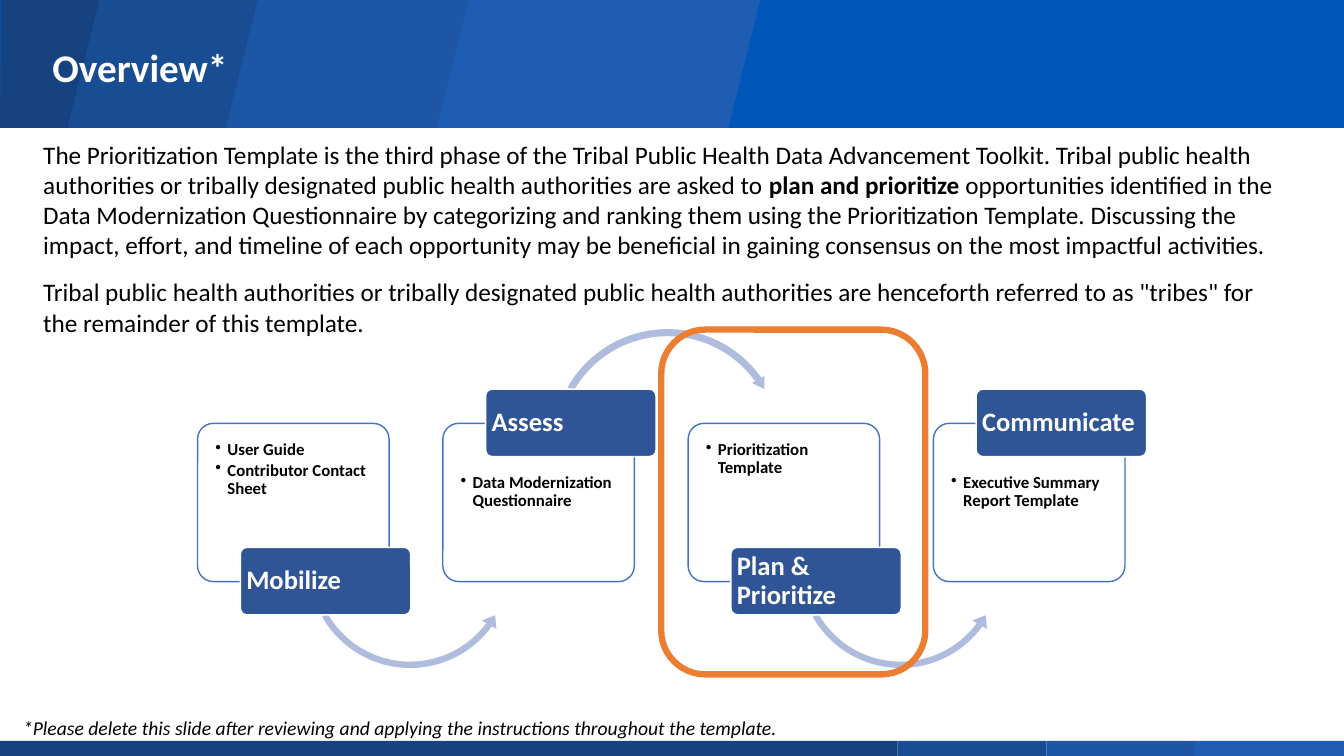
from dataclasses import dataclass

import pptx
import pptx.dml.color
import pptx.enum.shapes
import pptx.enum.text
import pptx.oxml
import pptx.oxml.ns
import pptx.util

Pt = pptx.util.Pt
Inches = pptx.util.Inches
SHAPE = pptx.enum.shapes.MSO_SHAPE
ANCHOR = pptx.enum.text.MSO_ANCHOR
ALIGN = pptx.enum.text.PP_ALIGN
WIDTH, HEIGHT = Inches(13.33), Inches(7.5)


@dataclass(frozen=True)
class Theme:
    font: str = "Calibri"
    header: str = "0057B7"
    blues: tuple = ("164380", "194D93", "1C56A4", "1E5DB2")
    tag: str = "2F5597"
    outline: str = "4472C4"
    arrow: str = "B0BCDE"
    highlight: str = "ED7D31"
    white: str = "FFFFFF"
    black: str = "000000"
    title_size: int = 28
    tag_size: int = 19
    body_size: int = 18
    note_size: int = 14
    bullet_size: int = 12


THEME = Theme()

BODY = [
    [("The Prioritization Template is the third phase of the Tribal Public Health Data "
      "Advancement Toolkit. Tribal public health authorities or tribally designated public "
      "health authorities are asked to ", False),
     ("plan and prioritize", True),
     (" opportunities identified in the Data Modernization Questionnaire by categorizing and "
      "ranking them using the Prioritization Template. Discussing the impact, effort, and "
      "timeline of each opportunity may be beneficial in gaining consensus on the most "
      "impactful activities.", False)],
    [("Tribal public health authorities or tribally designated public health authorities are "
      "henceforth referred to as \"tribes\" for the remainder of this template.", False)],
]
NOTE = ("*Please delete this slide after reviewing and applying the instructions "
        "throughout the template.")
PHASES = [
    ("Mobilize", ["User Guide", "Contributor Contact Sheet"]),
    ("Assess", ["Data Modernization Questionnaire"]),
    ("Plan & Prioritize", ["Prioritization Template"]),
    ("Communicate", ["Executive Summary Report Template"]),
]


def grid(x, y, w, h):
    """Turn hundredths of the slide's width and height into lengths."""
    return [int(v * side / 100) for v, side in zip((x, y, w, h), (WIDTH, HEIGHT) * 2)]


def rgb(color):
    return pptx.dml.color.RGBColor.from_string(color)


def paint(sp, fill=None, line=None, width=1):
    sp.shadow.inherit = False
    if fill:
        sp.fill.solid()
        sp.fill.fore_color.rgb = rgb(fill)
    else:
        sp.fill.background()
    if line:
        sp.line.color.rgb = rgb(line)
        sp.line.width = Pt(width)
    else:
        sp.line.fill.background()


def add_shape(s, kind, box, fill=None, line=None, width=1, adjustments=()):
    sp = s.shapes.add_shape(kind, *grid(*box))
    paint(sp, fill, line, width)
    for i, value in enumerate(adjustments):
        sp.adjustments[i] = value
    return sp


def style(text, size, color, bold=None, italic=None):
    """Format the font of a run or of every run in a paragraph."""
    for r in getattr(text, "runs", [text]):
        r.font.name, r.font.size = THEME.font, Pt(size)
        r.font.color.rgb = rgb(color)
        r.font.bold, r.font.italic = bold, italic


def set_insets(tf, left, top, right, bottom):
    tf.margin_left, tf.margin_top = Inches(left), Inches(top)
    tf.margin_right, tf.margin_bottom = Inches(right), Inches(bottom)


def add_bullet(p):
    ppr = p._p.get_or_add_pPr()
    ppr.set("marL", str(Inches(0.12)))
    ppr.set("indent", str(-Inches(0.12)))
    ppr.append(pptx.oxml.parse_xml(
        f'<a:buChar {pptx.oxml.ns.nsdecls("a")} char="•"/>'))


def add_textbox(s, box):
    tf = s.shapes.add_textbox(*grid(*box)).text_frame
    tf.word_wrap = True
    tf.auto_size = pptx.enum.text.MSO_AUTO_SIZE.SHAPE_TO_FIT_TEXT
    return tf


def add_header(s):
    add_shape(s, SHAPE.RECTANGLE, (0, 0, 100, 16.93), THEME.header)
    _, _, right, bottom = grid(0, 0, 8.03, 16.93)
    builder = s.shapes.build_freeform(0, bottom)
    builder.add_line_segments([(Inches(0.01), 0), (right, 0), (Inches(0.99), bottom)])
    paint(builder.convert_to_shape(), THEME.blues[0])
    for color, x, w in zip(THEME.blues[1:], (5.03, 16.8, 32.48), (15.3, 19.95, 24.08)):
        add_shape(s, SHAPE.PARALLELOGRAM, (x, 0, w, 16.93), color)


def add_footer(s):
    x = 0
    for color, w in zip(THEME.blues, (66.79, 11.07, 11.07, 11.07)):
        add_shape(s, SHAPE.RECTANGLE, (x, 98, w, 2), color)
        x += w


def set_title(s, text):
    title = s.shapes.title
    title.element.getparent().append(title.element)
    title.left, title.top, title.width, title.height = grid(3.15, 2.27, 86.25, 13.87)
    tf = title.text_frame
    tf.text = text
    tf.vertical_anchor = ANCHOR.MIDDLE
    p = tf.paragraphs[0]
    p.alignment, p.line_spacing = ALIGN.LEFT, 0.9
    style(p, THEME.title_size, THEME.white, bold=True)


def add_body(s):
    tf = add_textbox(s, (2.48, 17.73, 93.68, 27.87))
    for i, parts in enumerate(BODY):
        p = tf.add_paragraph() if i else tf.paragraphs[0]
        p.space_after = Pt(12)
        for text, bold in parts:
            r = p.add_run()
            r.text = text
            style(r, THEME.body_size, THEME.black, bold)


def add_note(s):
    tf = add_textbox(s, (0.98, 94, 61.28, 4.53))
    tf.text = NOTE
    style(tf.paragraphs[0], THEME.note_size, THEME.black, italic=True)


def add_card(s, x, items, tag_on_top):
    sp = add_shape(s, SHAPE.ROUNDED_RECTANGLE, (x, 56, 14.25, 20.93),
                   THEME.white, THEME.outline, adjustments=[0.1])
    tf = sp.text_frame
    tf.vertical_anchor = ANCHOR.TOP
    set_insets(tf, 0.13, 0.46 if tag_on_top else 0.13, 0.13, 0.13)
    tf.text = "\n".join(items)
    for p in tf.paragraphs:
        p.alignment, p.line_spacing, p.space_after = ALIGN.LEFT, 0.9, Pt(1.8)
        add_bullet(p)
        style(p, THEME.bullet_size, THEME.black, bold=True)


def add_tag(s, x, name, on_top):
    sp = add_shape(s, SHAPE.ROUNDED_RECTANGLE, (x, 51.47 if on_top else 72.4, 12.68, 8.93),
                   THEME.tag, THEME.white, adjustments=[0.1])
    tf = sp.text_frame
    tf.text = name
    tf.vertical_anchor = ANCHOR.MIDDLE
    set_insets(tf, 0.04, 0.03, 0.04, 0.03)
    p = tf.paragraphs[0]
    p.alignment, p.line_spacing = ALIGN.LEFT, 0.9
    style(p, THEME.tag_size, THEME.white, bold=True)


def add_arc_arrow(s, x, over):
    if over:
        add_shape(s, SHAPE.CIRCULAR_ARROW, (x, 43.07, 17.63, 31.33), THEME.arrow,
                  adjustments=(0.03, 3.52, 194.73, 125.76, 0.03))
    else:
        add_shape(s, SHAPE.LEFT_CIRCULAR_ARROW, (x, 60.93, 15.83, 28.13), THEME.arrow,
                  adjustments=(0.03, 3.95, 21.71, 90.25, 0.04))


def add_process(s):
    for i, (name, items) in enumerate(PHASES):
        x, tag_on_top = 14.7 + 18.25 * i, i % 2 == 1
        add_card(s, x, items, tag_on_top)
        if i < len(PHASES) - 1:
            add_arc_arrow(s, x + 7.9, tag_on_top)
        add_tag(s, x + 3.18, name, tag_on_top)


def main():
    prs = pptx.Presentation()
    prs.slide_width, prs.slide_height = WIDTH, HEIGHT
    s = prs.slides.add_slide(prs.slide_layouts.get_by_name("Title Only"))
    add_header(s)
    add_footer(s)
    set_title(s, "Overview*")
    add_body(s)
    add_note(s)
    add_process(s)
    add_shape(s, SHAPE.ROUNDED_RECTANGLE, (49.2, 43.6, 19.65, 45.6),
              line=THEME.highlight, width=4.5)
    prs.save("out.pptx")


if __name__ == "__main__":
    main()
